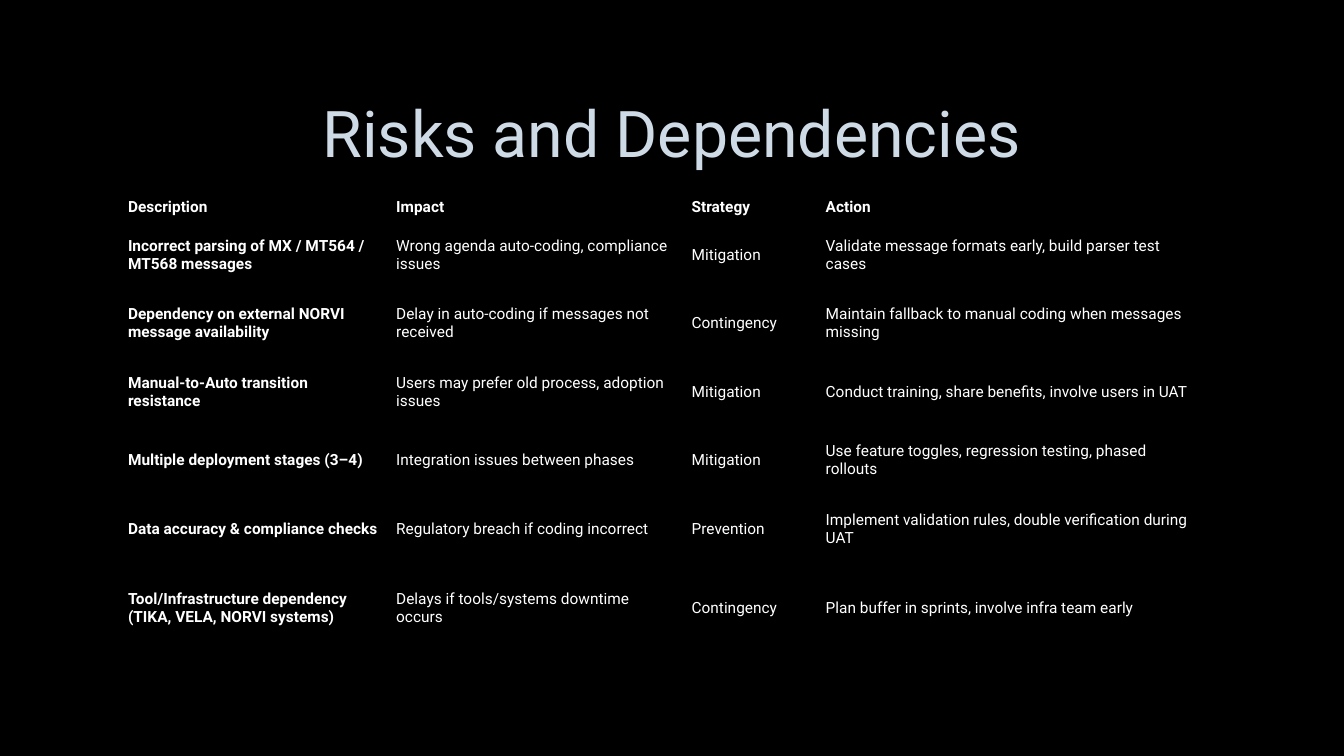
from pptx import Presentation
from pptx import util as u
from pptx.dml.color import RGBColor
from pptx.enum import text as t
from pptx.oxml.ns import qn

WIDTH, HEIGHT = 13.33, 7.5
FONT = "Roboto"
PLAIN_TABLE_STYLE = "{2D5ABB26-0587-4C30-8999-92F81FD0307C}"
COLUMNS = [2.66, 2.93, 1.33, 3.73]
ROWS = [0.27] + [0.68] * 5 + [0.89]
RISKS = [
    ("Description", "Impact", "Strategy", "Action"),
    ("Incorrect parsing of MX / MT564 / MT568 messages",
     "Wrong agenda auto-coding, compliance issues",
     "Mitigation", "Validate message formats early, build parser test cases"),
    ("Dependency on external NORVI message availability",
     "Delay in auto-coding if messages not received",
     "Contingency", "Maintain fallback to manual coding when messages missing"),
    ("Manual-to-Auto transition resistance",
     "Users may prefer old process, adoption issues",
     "Mitigation", "Conduct training, share benefits, involve users in UAT"),
    ("Multiple deployment stages (3–4)",
     "Integration issues between phases",
     "Mitigation", "Use feature toggles, regression testing, phased rollouts"),
    ("Data accuracy & compliance checks",
     "Regulatory breach if coding incorrect",
     "Prevention", "Implement validation rules, double verification during UAT"),
    ("Tool/Infrastructure dependency (TIKA, VELA, NORVI systems)",
     "Delays if tools/systems downtime occurs",
     "Contingency", "Plan buffer in sprints, involve infra team early"),
]


def color(value):
    """Turn a hex string into a colour."""
    return RGBColor.from_string(value)


def write(frame, text, size=11, fill="FFFFFF", bold=False,
          align=t.PP_ALIGN.LEFT, spacing=None):
    """Write one formatted paragraph into a text frame."""
    frame.word_wrap = True
    para = frame.paragraphs[0]
    para.alignment = align
    para.line_spacing = spacing
    span = para.add_run()
    span.text = text
    span.font.name = FONT
    span.font.size = u.Pt(size)
    span.font.bold = bold
    span.font.color.rgb = color(fill)


def add_title(page, box, text):
    """Place the centred heading in its box."""
    frame = page.shapes.add_textbox(*map(u.Inches, box)).text_frame
    frame.vertical_anchor = t.MSO_ANCHOR.MIDDLE
    write(frame, text, size=46, fill="CEDBE6",
          align=t.PP_ALIGN.CENTER, spacing=0.9)


def add_risk_table(page, box, risks):
    """Place the unruled risk table, with bold header row and first column."""
    table = page.shapes.add_table(len(risks), len(COLUMNS),
                                  *map(u.Inches, box)).table
    table.first_row = table.horz_banding = False
    table._tbl.tblPr.find(qn("a:tableStyleId")).text = PLAIN_TABLE_STYLE
    for column, width in zip(table.columns, COLUMNS):
        column.width = u.Inches(width)
    for row, height, texts in zip(table.rows, ROWS, risks):
        row.height = u.Inches(height)
        for index, (cell, text) in enumerate(zip(row.cells, texts)):
            cell.fill.background()
            cell.vertical_anchor = t.MSO_ANCHOR.MIDDLE
            cell.margin_left = cell.margin_right = u.Inches(0.06)
            cell.margin_top = cell.margin_bottom = u.Inches(0.03)
            write(cell.text_frame, text,
                  bold=index == 0 or texts is risks[0])


def main():
    """Build and save the deck."""
    deck = Presentation()
    deck.slide_width, deck.slide_height = u.Inches(WIDTH), u.Inches(HEIGHT)
    page = deck.slides.add_slide(deck.slide_layouts[6])
    page.background.fill.solid()
    page.background.fill.fore_color.rgb = color("000000")
    add_title(page, (1, 0.67, 11.32, 1.38), "Risks and Dependencies")
    add_risk_table(page, (1.21, 1.92, sum(COLUMNS), sum(ROWS)), RISKS)
    deck.save("out.pptx")


if __name__ == "__main__":
    main()
